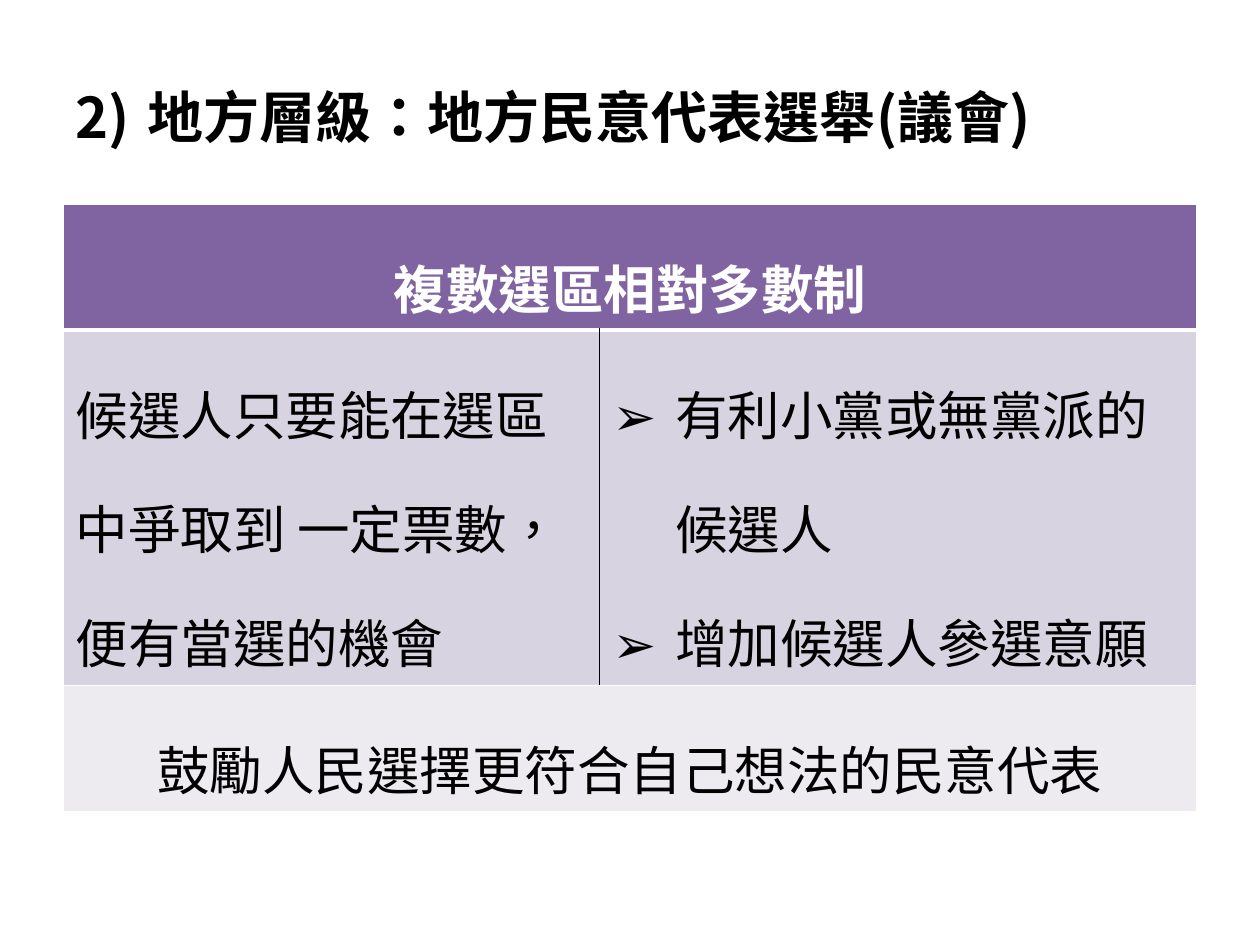
from dataclasses import dataclass

from lxml import etree
from pptx import Presentation
from pptx import util as u
from pptx.dml.color import RGBColor
from pptx.enum import lang, text
from pptx.oxml import ns


@dataclass(frozen=True)
class Theme:
    font: str = "Noto Sans CJK SC"
    title_size: int = 32
    table_size: int = 30
    ink: str = "000000"
    paper: str = "FFFFFF"
    header: str = "8064A2"
    body: str = "D8D3E0"
    footer: str = "EDEAF0"


@dataclass(frozen=True)
class Marker:
    tag: str
    attributes: dict[str, str]
    indent: float


@dataclass(frozen=True)
class Entry:
    row: int
    column: int
    lines: tuple[str, ...]
    fill: str
    color: str = Theme.ink
    bold: bool = False
    span: int = 1
    marker: Marker | None = None


THEME = Theme()
WIDTH, HEIGHT = u.Inches(10), u.Inches(7.5)
MARGIN = 0.05
COLUMN_SHARES = (0.426, 0.474)
ROW_HEIGHTS = (1.0, 2.82, 1.0)
NUMBER = Marker("a:buAutoNum", {"type": "arabicParenR", "startAt": "2"}, 0.57)
ARROW = Marker("a:buChar", {"char": "➢"}, 0.5)
ENTRIES = (
    Entry(0, 0, ("複數選區相對多數制",), THEME.header, THEME.paper, True, 2),
    Entry(1, 0, ("候選人只要能在選區中爭取到 一定票數，便有當選的機會",), THEME.body),
    Entry(1, 1, ("有利小黨或無黨派的候選人", "增加候選人參選意願"), THEME.body, marker=ARROW),
    Entry(2, 0, ("鼓勵人民選擇更符合自己想法的民意代表",), THEME.footer, span=2),
)


def add_marker(para, marker: Marker) -> None:
    properties = para._p.get_or_add_pPr()
    indent = u.Inches(marker.indent)
    properties.set("marL", str(indent))
    properties.set("indent", str(-indent))
    etree.SubElement(properties, ns.qn("a:buFont"), typeface=THEME.font)
    etree.SubElement(properties, ns.qn(marker.tag), marker.attributes)


def add_span(para, words: str, size: int, color: str, bold: bool) -> None:
    span = para.add_run()
    span.text = words
    font = span.font
    font.name, font.size, font.bold = THEME.font, u.Pt(size), bold
    font.color.rgb = RGBColor.from_string(color)
    font.language_id = lang.MSO_LANGUAGE_ID.TRADITIONAL_CHINESE
    etree.SubElement(span._r.get_or_add_rPr(), ns.qn("a:ea"), typeface=THEME.font)


def add_border(cell, side: str, color: str, points: float) -> None:
    line = etree.SubElement(cell._tc.get_or_add_tcPr(), ns.qn(f"a:ln{side}"), w=str(u.Pt(points)))
    fill = etree.SubElement(line, ns.qn("a:solidFill"))
    etree.SubElement(fill, ns.qn("a:srgbClr"), val=color)


def style_cell(cell, row: int, column: int, fill: str) -> None:
    for side in "LRTB":
        divider = row == 1 and (side, column) in (("R", 0), ("L", 1))
        heavy = (row, side) in ((0, "B"), (1, "T"))
        add_border(cell, side, THEME.ink if divider else THEME.paper, 3 if heavy else 1)
    cell.fill.solid()
    cell.fill.fore_color.rgb = RGBColor.from_string(fill)


def fill_entry(table, entry: Entry) -> None:
    cell = table.cell(entry.row, entry.column)
    for column in range(entry.column, entry.column + entry.span):
        style_cell(table.cell(entry.row, column), entry.row, column, entry.fill)
    if entry.span > 1:
        cell.merge(table.cell(entry.row, entry.column + entry.span - 1))
    frame = cell.text_frame
    for index, words in enumerate(entry.lines):
        para = frame.add_paragraph() if index else frame.paragraphs[0]
        if entry.marker:
            add_marker(para, entry.marker)
        para.alignment = text.PP_ALIGN.CENTER if entry.span > 1 else text.PP_ALIGN.LEFT
        para.line_spacing = 1.5
        add_span(para, words, THEME.table_size, entry.color, entry.bold)


def add_title(page, words: str) -> None:
    box = page.shapes.add_textbox(
        int(WIDTH * MARGIN), int(HEIGHT * 0.04), int(WIDTH * 0.9), int(HEIGHT / 6)
    )
    frame = box.text_frame
    frame.word_wrap = True
    frame.vertical_anchor = text.MSO_ANCHOR.MIDDLE
    para = frame.paragraphs[0]
    add_marker(para, NUMBER)
    add_span(para, words, THEME.title_size, THEME.ink, True)


def add_system_table(page) -> None:
    holder = page.shapes.add_table(
        len(ROW_HEIGHTS), len(COLUMN_SHARES), int(WIDTH * MARGIN), int(HEIGHT * 0.216),
        int(WIDTH * 0.9), u.Inches(sum(ROW_HEIGHTS)),
    )
    table = holder.table
    table.first_row = table.horz_banding = False
    for column, share in zip(table.columns, COLUMN_SHARES):
        column.width = int(WIDTH * share)
    for row, height in zip(table.rows, ROW_HEIGHTS):
        row.height = u.Inches(height)
    for entry in ENTRIES:
        fill_entry(table, entry)


def main() -> None:
    deck = Presentation()
    deck.slide_width, deck.slide_height = WIDTH, HEIGHT
    page = deck.slides.add_slide(deck.slide_layouts[6])
    add_title(page, "地方層級：地方民意代表選舉(議會)")
    add_system_table(page)
    deck.save("out.pptx")


if __name__ == "__main__":
    main()
